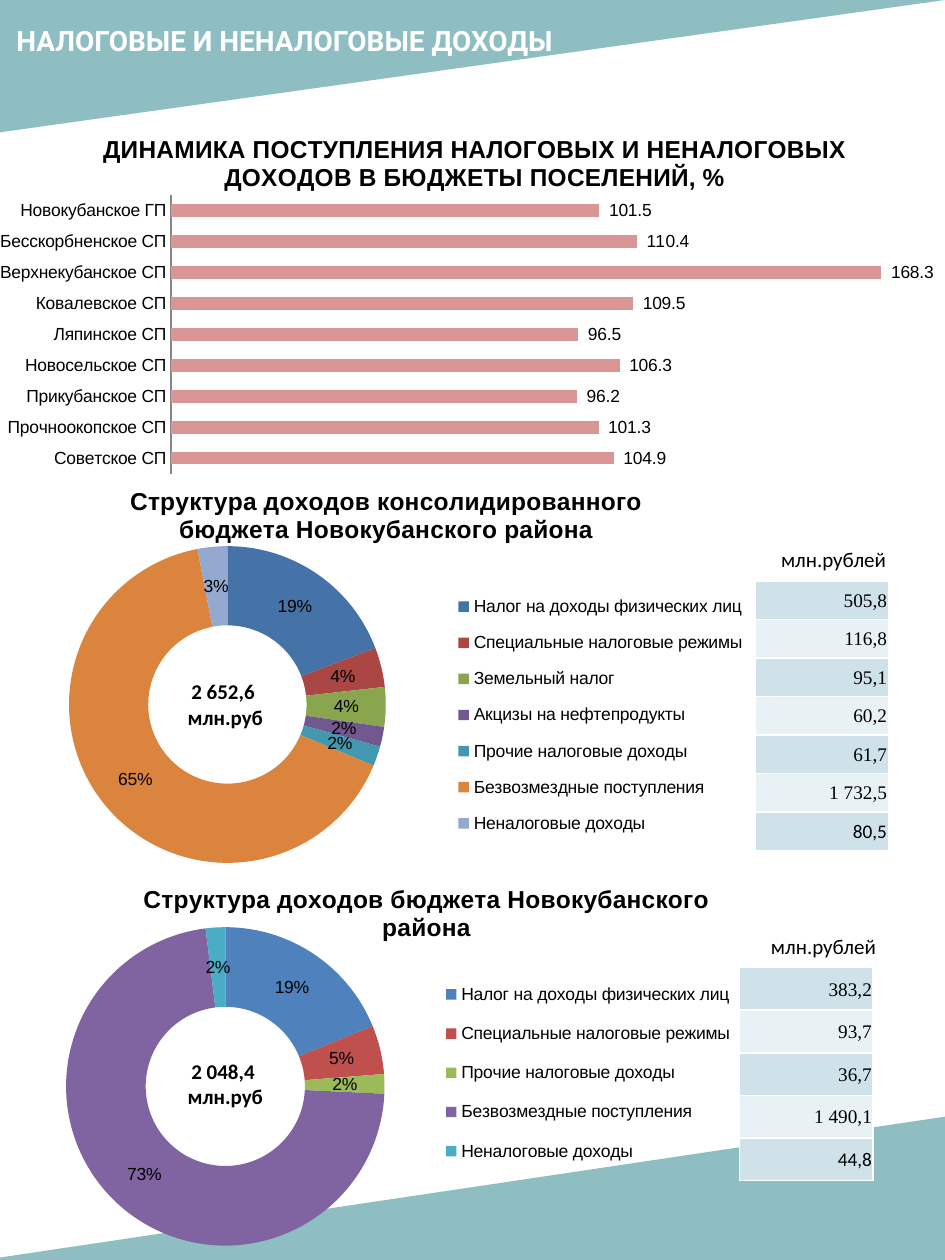
from pptx import Presentation
from pptx.chart.data import CategoryChartData as Data
from pptx.dml.color import RGBColor as RGB
from pptx.enum.chart import XL_CHART_TYPE as Kind, XL_LABEL_POSITION as Spot
from pptx.enum.chart import XL_LEGEND_POSITION as Side, XL_TICK_MARK as Tick
from pptx.enum.shapes import MSO_SHAPE as Form
from pptx.enum.text import MSO_ANCHOR as Anchor, PP_ALIGN as Align
from pptx.enum.text import MSO_AUTO_SIZE as Fit
from pptx.oxml import parse_xml
from pptx.oxml.ns import nsdecls, qn
from pptx.util import Inches, Pt

deck = Presentation()
deck.slide_width, deck.slide_height = Inches(7.5), Inches(10)
COL = deck.slide_width / 75
ROW = deck.slide_height / 100


def tint(fill, code):
    fill.solid()
    fill.fore_color.rgb = RGB.from_string(code)


def area(x, y, w, h):
    """Turn columns and rows of the grid into a place and a size."""
    return [round(n * unit) for n, unit in zip((x, y, w, h), (COL, ROW) * 2)]


HEAD = {"name": "Roboto", "size": Pt(16), "bold": True}
UNIT = {"name": "Calibri", "size": Pt(12), "bold": False}
SUM = {**UNIT, "bold": True}
CELL = {"name": "Times New Roman", "size": Pt(11), "bold": False}
LAST = {**CELL, "name": "Calibri"}
CHART = {"name": "Arial", "size": Pt(10)}
NAME = {"name": "Arial", "size": Pt(14), "bold": True}
BLACK, WHITE = "000000", "FFFFFF"
looks = []  # font, format values, colour

slide = deck.slides.add_slide(deck.slide_layouts[5])
shapes = slide.shapes

# Corner wedges, behind the title
wedges = [((0, 0, 75, 10.5), "flipH"), ((-1.3, 88.6, 76.5, 11.4), "flipV")]
for place, flip in wedges:
    wedge = shapes.add_shape(Form.RIGHT_TRIANGLE, *area(*place))
    wedge.rotation = 180
    wedge.element.spPr.xfrm.set(flip, "1")
    wedge.shadow.inherit = False
    wedge.line.fill.background()
    tint(wedge.fill, "519AA0")
    clear = parse_xml(f'<a:alpha {nsdecls("a")} val="64000"/>')
    wedge.element.spPr.find(".//" + qn("a:srgbClr")).append(clear)
    shapes.title.element.addprevious(wedge.element)

title = shapes.title
title.left, title.top, title.width, title.height = area(0.3, 1.4, 45.1, 6.3)
title.text = "НАЛОГОВЫЕ И НЕНАЛОГОВЫЕ ДОХОДЫ"
title.text_frame.vertical_anchor = Anchor.TOP
title.text_frame.paragraphs[0].alignment = Align.LEFT
looks.append((title.text_frame.paragraphs[0].runs[0].font, HEAD, WHITE))

# Charts: kind, place, title, plot shares, legend shares, colours, data
TAX, MODE = "Налог на доходы физических лиц", "Специальные налоговые режимы"
REST, GRANT, OTHER = ("Прочие налоговые доходы", "Безвозмездные поступления",
                      "Неналоговые доходы")
charts = [
    (Kind.BAR_CLUSTERED, (0, 9.1, 75, 29.7),
     "ДИНАМИКА ПОСТУПЛЕНИЯ НАЛОГОВЫХ И НЕНАЛОГОВЫХ ДОХОДОВ В БЮДЖЕТЫ ПОСЕЛЕНИЙ, %",
     (0.177, 0.215, 0.808, 0.745), None, ["D99694"],
     {"Новокубанское ГП": 101.5, "Бесскорбненское СП": 110.4,
      "Верхнекубанское СП": 168.3, "Ковалевское СП": 109.5,
      "Ляпинское СП": 96.5, "Новосельское СП": 106.3,
      "Прикубанское СП": 96.2, "Прочноокопское СП": 101.3,
      "Советское СП": 104.9}),
    (Kind.DOUGHNUT, (0.3, 37, 60.7, 32.4),
     "Структура доходов консолидированного бюджета Новокубанского района",
     (0.085, 0.196, 0.415, 0.776), (0.585, 0.28, 0.39, 0.66),
     ["4572A7", "AA4643", "89A54E", "71588F", "4198AF", "DB843D", "93A9CF"],
     {TAX: 19, MODE: 4, "Земельный налог": 4, "Акцизы на нефтепродукты": 2,
      REST: 2, GRANT: 65, OTHER: 3}),
    (Kind.DOUGHNUT, (1, 68.6, 65.7, 31.4),
     "Структура доходов бюджета Новокубанского района",
     (0.054, 0.159, 0.406, 0.805), (0.515, 0.255, 0.36, 0.545),
     ["4F81BD", "C0504D", "9BBB59", "8064A2", "4BACC6"],
     {TAX: 19, MODE: 5, REST: 2, GRANT: 73, OTHER: 2}),
]
for kind, place, head, plot_at, key_at, hues, vals in charts:
    data = Data()
    data.categories = list(vals)
    data.add_series("Series 1", list(vals.values()))
    chart = shapes.add_chart(kind, *area(*place), data).chart
    looks.append((chart.font, CHART, BLACK))
    chart.has_title = True
    chart.chart_title.include_in_layout = False
    run = chart.chart_title.text_frame.paragraphs[0].add_run()
    run.text = head
    looks.append((run.font, NAME, BLACK))

    plot = chart.plots[0]
    row = plot.series[0]
    plot.has_data_labels = True
    tags = plot.data_labels
    tags.show_value, tags.show_percentage = True, False
    tags.number_format_is_linked = False
    chart.has_legend = key_at is not None
    if key_at:
        tags.number_format = '0"%"'
        chart.legend.position = Side.RIGHT
        chart.legend.include_in_layout = False
        for num, code in enumerate(hues):
            tint(row.points[num].format.fill, code)
    else:
        tags.number_format = r"#\ ##0.0"
        tags.position = Spot.OUTSIDE_END
        plot.vary_by_categories = False
        plot.gap_width, plot.overlap = 150, -25
        tint(row.format.fill, hues[0])
        names, scale = chart.category_axis, chart.value_axis
        names.reverse_order = True
        names.major_tick_mark = names.minor_tick_mark = Tick.NONE
        tint(names.format.line.fill, "868686")
        names.format.line.width = Pt(1)
        scale.visible = scale.has_major_gridlines = False
        scale.minimum_scale, scale.maximum_scale = 0, 180

    for part, shares, index in (("plotArea", plot_at, 0), ("legend", key_at, 1)):
        if shares is None:
            continue
        node = chart.element.find(".//" + qn("c:" + part))
        for old in node.findall(qn("c:layout")):
            node.remove(old)
        inner = '<c:layoutTarget val="inner"/>' if index == 0 else ""
        modes = '<c:xMode val="edge"/><c:yMode val="edge"/>'
        sizes = "".join(f'<c:{k} val="{v}"/>' for k, v in zip("xywh", shares))
        node.insert(index, parse_xml(
            f'<c:layout {nsdecls("c")}><c:manualLayout>{inner}{modes}{sizes}'
            '</c:manualLayout></c:layout>'))

# Unit captions and ring totals
texts = [
    ((61, 42.9, 10.8, 3), ["млн.рублей"], UNIT, Align.LEFT, False),
    ((60.2, 73.6, 10.8, 3), ["млн.рублей"], UNIT, Align.LEFT, False),
    ((13.3, 53.4, 8.8, 5), ["2 652,6", " млн.руб"], SUM, Align.CENTER, True),
    ((13.3, 83.5, 8.8, 5), ["2 048,4", " млн.руб"], SUM, Align.CENTER, True),
]
for place, lines, look, side, wrap in texts:
    frame = shapes.add_textbox(*area(*place)).text_frame
    frame.word_wrap = wrap
    frame.auto_size = Fit.SHAPE_TO_FIT_TEXT
    frame.text = "\n".join(lines)
    for para in frame.paragraphs:
        para.alignment = side
        looks.append((para.runs[0].font, look, BLACK))

# Sums beside the legends
tables = [
    ((59.9, 46.1, 10.6, 21.4),
     ["505,8", "116,8", "95,1", "60,2", "61,7", "1 732,5", "80,5"]),
    ((58.7, 76.8, 10.6, 16.9), ["383,2", "93,7", "36,7", "1 490,1", "44,8"]),
]
for place, sums in tables:
    table = shapes.add_table(len(sums), 1, *area(*place)).table
    table.first_row = False
    for num, text in enumerate(sums):
        cell = table.cell(num, 0)
        cell.text = text
        cell.vertical_anchor = Anchor.MIDDLE
        cell.margin_left = cell.margin_right = cell.margin_top = Inches(0.01)
        cell.margin_bottom = 0
        tint(cell.fill, ("CFE2EA", "E8F1F4")[num % 2])
        para = cell.text_frame.paragraphs[0]
        para.alignment = Align.RIGHT
        look = LAST if num == len(sums) - 1 else CELL
        looks.append((para.runs[0].font, look, BLACK))

for font, look, code in looks:
    for key, val in look.items():
        setattr(font, key, val)
    tint(font.fill, code)

deck.save("out.pptx")
